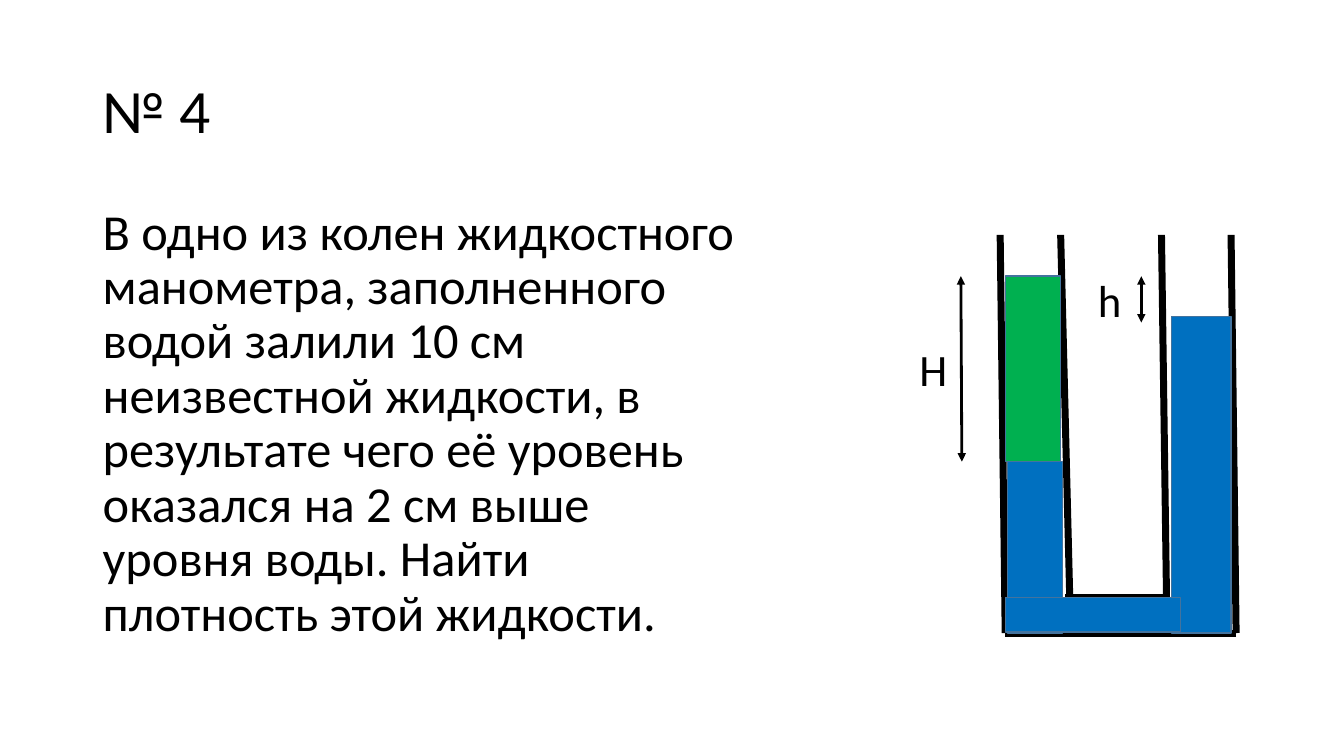
from pptx import Presentation
from pptx.dml.color import RGBColor
from pptx.enum.shapes import MSO_CONNECTOR as CONN, MSO_SHAPE as SHAPE
from pptx.enum.text import MSO_ANCHOR as ANCHOR, MSO_AUTO_SIZE as AUTO
from pptx.oxml.ns import qn
from pptx.util import Inches, Pt
from lxml import etree

# Content
TITLE = "№ 4"
PROBLEM = ("В одно из колен жидкостного манометра, заполненного водой залили "
           "10 см неизвестной жидкости, в результате чего её уровень оказался "
           "на 2 см выше уровня воды. Найти плотность этой жидкости.")
FONT = "Calibri"
BLACK, GREEN, BLUE, EDGE = "000000", "00B050", "0070C0", "43739E"

# Key heights of the manometer
RIM, LIQUID_TOP, WATER_TOP, BOUNDARY = 2.33, 2.74, 3.14, 4.58
INNER_FLOOR, FLOOR = 5.93, 6.28

# Tube walls: x1, y1, x2, y2
WALLS = [
    (9.92, RIM, 9.97, FLOOR),
    (10.52, RIM, 10.61, INNER_FLOOR),
    (11.52, RIM, 11.57, INNER_FLOOR),
    (12.21, RIM, 12.26, FLOOR),
    (12.26, FLOOR, 9.97, FLOOR),
    (11.57, INNER_FLOOR, 10.56, INNER_FLOOR),
]
# Liquids: left, top, right, bottom, fill
LIQUIDS = [
    (9.97, LIQUID_TOP, 10.52, BOUNDARY, GREEN),
    (9.99, BOUNDARY, 10.54, FLOOR, BLUE),
    (11.62, WATER_TOP, 12.21, FLOOR, BLUE),
    (9.97, INNER_FLOOR, 11.71, 6.27, BLUE),
]
HEIGHT_ARROWS = [(9.53, LIQUID_TOP, 9.54, BOUNDARY),
                 (11.32, LIQUID_TOP, 11.32, 3.2)]
HEIGHT_LABELS = [("H", 9.02, 3.34, 0.48), ("h", 10.79, 2.66, 0.44)]


def rgb(color):
    return RGBColor.from_string(color)


def add_text(s, text, left, top, width, height, size, wrap=True):
    tf = s.shapes.add_textbox(*map(Inches, (left, top, width, height))).text_frame
    tf.text = text
    tf.word_wrap = wrap
    font = tf.paragraphs[0].runs[0].font
    font.name, font.size, font.color.rgb = FONT, Pt(size), rgb(BLACK)
    return tf


def add_line(s, ends, weight, arrows=False):
    line = s.shapes.add_connector(CONN.STRAIGHT, *map(Inches, ends))
    line.line.color.rgb = rgb(BLACK)
    line.line.width = Pt(weight)
    spPr = line._element.spPr
    if arrows:
        for end in ("a:headEnd", "a:tailEnd"):
            etree.SubElement(spPr.find(qn("a:ln")), qn(end), type="triangle")
    etree.SubElement(spPr, qn("a:effectLst"))


def add_liquid(s, left, top, right, bottom, color):
    sp = s.shapes.add_shape(SHAPE.RECTANGLE, *map(
        Inches, (left, top, right - left, bottom - top)))
    sp.shadow.inherit = False
    sp.fill.solid()
    sp.fill.fore_color.rgb = rgb(color)
    sp.line.color.rgb = rgb(EDGE)
    sp.line.width = Pt(1)


prs = Presentation()
prs.slide_width, prs.slide_height = Inches(13.33), Inches(7.5)
s = prs.slides.add_slide(prs.slide_layouts[6])

# Title and problem statement
tf = add_text(s, TITLE, 0.92, 0.4, 11.5, 1.45, 44)
tf.vertical_anchor = ANCHOR.MIDDLE
tf.paragraphs[0].line_spacing = 0.9
p = add_text(s, PROBLEM, 0.92, 2, 6.62, 4.76, 36).paragraphs[0]
p.line_spacing = 0.9
p.space_before = Pt(10)

# Manometer
for wall in WALLS:
    add_line(s, wall, 5)
for liquid in LIQUIDS:
    add_liquid(s, *liquid)

# Height marks
for arrow in HEIGHT_ARROWS:
    add_line(s, arrow, 2, arrows=True)
for text, left, top, width in HEIGHT_LABELS:
    tf = add_text(s, text, left, top, width, 0.64, 32, wrap=False)
    tf.auto_size = AUTO.SHAPE_TO_FIT_TEXT

prs.save("out.pptx")
